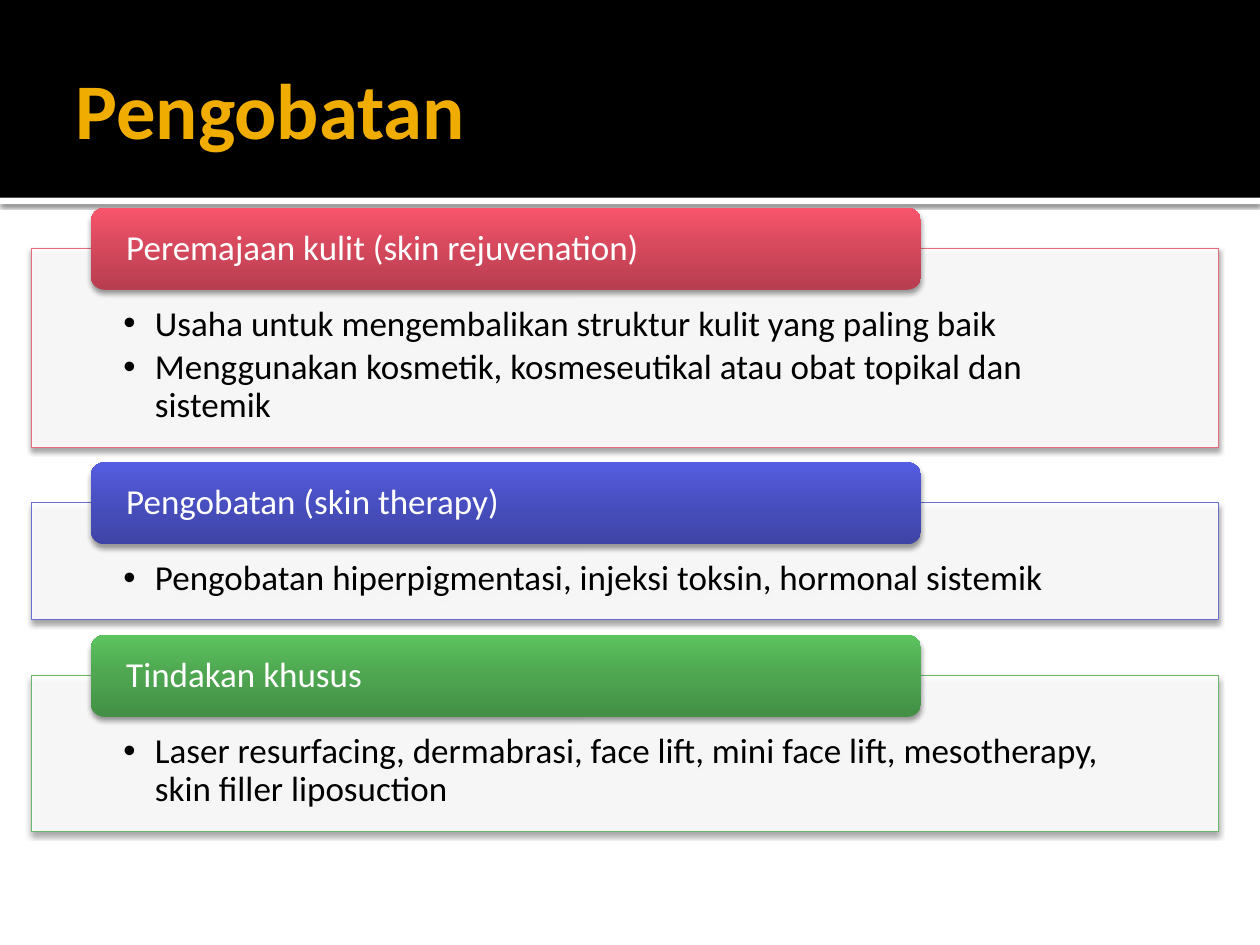
"""Build the slide "Pengobatan" with three titled treatment panels."""
import copy

import pptx
import pptx.dml.color
import pptx.enum.shapes
import pptx.enum.text
import pptx.oxml.ns
import pptx.oxml.xmlchemy
import pptx.util
from lxml import etree

RGBColor = pptx.dml.color.RGBColor
BLACK = RGBColor(0x00, 0x00, 0x00)
WHITE = RGBColor(0xFF, 0xFF, 0xFF)
AMBER = RGBColor(0xF0, 0xAD, 0x00)
RED_LINE = RGBColor(0xE6, 0x6C, 0x7D)
RED_STOPS = [RGBColor(0xB7, 0x3E, 0x4F), RGBColor(0xD7, 0x49, 0x5D), RGBColor(0xFA, 0x55, 0x6C)]
BLUE_LINE = RGBColor(0x69, 0x6F, 0xD1)
BLUE_STOPS = [RGBColor(0x3E, 0x44, 0xA5), RGBColor(0x49, 0x50, 0xC2), RGBColor(0x55, 0x5D, 0xE2)]
GREEN_LINE = RGBColor(0x6B, 0xB7, 0x6D)
GREEN_STOPS = [RGBColor(0x43, 0x8F, 0x45), RGBColor(0x4F, 0xA8, 0x51), RGBColor(0x5C, 0xC3, 0x5F)]

qn = pptx.oxml.ns.qn
Pt = pptx.util.Pt
SHAPES = pptx.enum.shapes.MSO_SHAPE
ANCHOR = pptx.enum.text.MSO_ANCHOR
LEFT = pptx.enum.text.PP_ALIGN.LEFT

presentation = pptx.Presentation()
presentation.slide_width = pptx.util.Inches(10)
presentation.slide_height = pptx.util.Inches(7.5)
COLUMN = presentation.slide_width / 10
ROW = presentation.slide_height / 7.5
slide = presentation.slides.add_slide(presentation.slide_layouts.get_by_name("Comparison"))


def add_shadow(shape, blur, distance, opacity):
    shape.shadow.inherit = False
    effects = shape.element.spPr.find(qn("a:effectLst"))
    shadow = etree.SubElement(effects, qn("a:outerShdw"), blurRad=str(Pt(blur)), dist=str(Pt(distance)),
                              dir="5400000", algn="ctr", rotWithShape="0")
    color = etree.SubElement(shadow, qn("a:srgbClr"), val=str(BLACK))
    etree.SubElement(color, qn("a:alpha"), val=str(opacity * 1000))


def write_text(shape, texts, size, color, anchor, insets, bold=False):
    frame = shape.text_frame
    frame.word_wrap = True
    frame.auto_size = pptx.enum.text.MSO_AUTO_SIZE.NONE
    frame.vertical_anchor = anchor
    frame.margin_left, frame.margin_top, frame.margin_right, frame.margin_bottom = [
        int(inset * COLUMN) for inset in insets]
    for index, text in enumerate(texts):
        paragraph = frame.add_paragraph() if index else frame.paragraphs[0]
        paragraph.alignment = LEFT
        paragraph.space_before = Pt(0)
        run = paragraph.add_run()
        run.text = text
        run.font.name = "Calibri"
        run.font.size = Pt(size)
        run.font.bold = bold
        run.font.color.rgb = color
    return frame.paragraphs


bands = [(1.57, 0.05, WHITE), (0, 1.57, BLACK)]
for position, (top, height, color) in enumerate(bands):
    band = slide.shapes.add_shape(SHAPES.RECTANGLE, 0, int(top * ROW), presentation.slide_width, int(height * ROW))
    band.fill.solid()
    band.fill.fore_color.rgb = color
    band.line.fill.background()
    band.shadow.inherit = False
    if color == WHITE:
        add_shadow(band, 2.5, 0.8, 60)
    slide.shapes.element.insert(2 + position, band.element)

title = slide.shapes.title
title.left, title.top = int(0.5 * COLUMN), int(0.17 * ROW)
title.width, title.height = int(9 * COLUMN), int(1.37 * ROW)
write_text(title, ["Pengobatan"], 45, AMBER, ANCHOR.MIDDLE, (0.1, 0.05, 0.05, 0.05), bold=True)

sections = [
    ("Peremajaan kulit (skin rejuvenation)", 1.58, RED_LINE, RED_STOPS,
     ["Usaha untuk mengembalikan struktur kulit yang paling baik",
      "Menggunakan kosmetik, kosmeseutikal atau obat topikal dan sistemik"]),
    ("Pengobatan (skin therapy)", 0.93, BLUE_LINE, BLUE_STOPS,
     ["Pengobatan hiperpigmentasi, injeksi toksin, hormonal sistemik"]),
    ("Tindakan khusus", 1.24, GREEN_LINE, GREEN_STOPS,
     ["Laser resurfacing, dermabrasi, face lift, mini face lift, mesotherapy, skin filler liposuction"]),
]
title_shape, *panels, spare = slide.placeholders
spare.element.getparent().remove(spare.element)

panel_top = 1.97
panel_gap = 0.44
header_rise = 0.32
for panel, (heading, panel_height, line_color, stop_colors, items) in zip(panels, sections):
    panel.left, panel.top = int(0.25 * COLUMN), int(panel_top * ROW)
    panel.width, panel.height = int(9.42 * COLUMN), int(panel_height * ROW)
    panel.fill.solid()
    panel.fill.fore_color.rgb = WHITE
    fill_color = panel.element.spPr.find(qn("a:solidFill")).find(qn("a:srgbClr"))
    etree.SubElement(fill_color, qn("a:alpha"), val="90000")
    panel.line.color.rgb = line_color
    panel.line.width = Pt(0.5)
    add_shadow(panel, 3.1, 2, 38)
    for paragraph in write_text(panel, items, 20, BLACK, ANCHOR.TOP, (0.73, 0.46, 0.73, 0.16)):
        paragraph.line_spacing = 0.9
        paragraph.space_after = Pt(3)
        properties = paragraph._p.get_or_add_pPr()
        properties.set("marL", str(int(0.25 * COLUMN)))
        properties.set("indent", str(int(-0.25 * COLUMN)))
        etree.SubElement(properties, qn("a:buFont"), typeface="Arial")
        etree.SubElement(properties, qn("a:buChar"), char="•")

    header = slide.shapes.add_shape(SHAPES.ROUNDED_RECTANGLE, int(0.72 * COLUMN),
                                    int((panel_top - header_rise) * ROW), int(6.59 * COLUMN), int(0.65 * ROW))
    header.fill.gradient()
    header.fill.gradient_angle = 90
    stop_list = header.element.spPr.find(qn("a:gradFill")).find(qn("a:gsLst"))
    stop_list.append(copy.deepcopy(stop_list[0]))
    for stop, position, color in zip(header.fill.gradient_stops, (0, 0.55, 1), stop_colors):
        stop.position = position
        stop.color.rgb = color
    header.line.fill.background()
    add_shadow(header, 3.1, 2, 38)
    heading_paragraph = write_text(header, [heading], 20, WHITE, ANCHOR.MIDDLE, (0.25, 0, 0.25, 0))[0]
    heading_paragraph.line_spacing = 0.9
    panel_top += panel_height + panel_gap

presentation.save("out.pptx")
